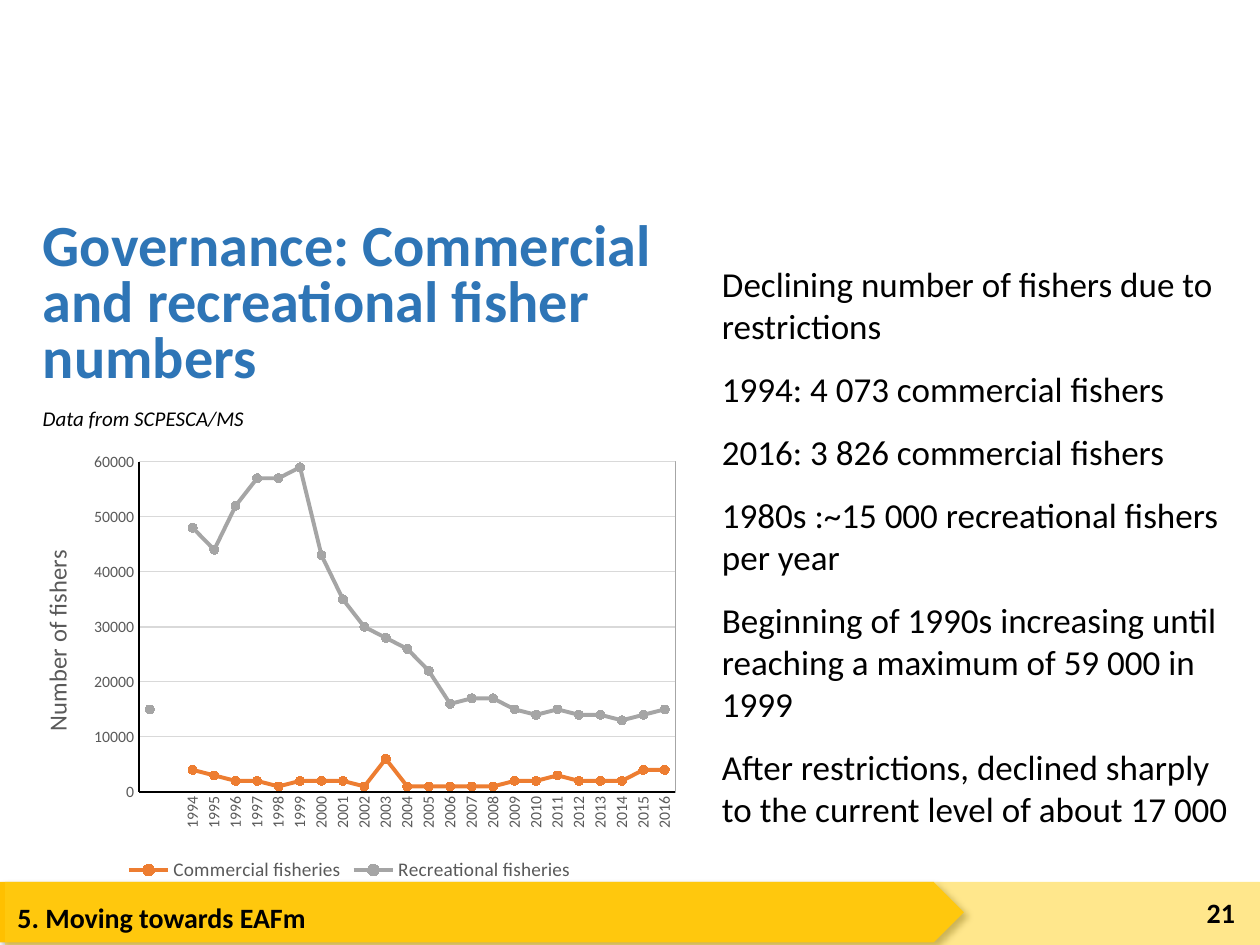
from dataclasses import dataclass
from typing import NamedTuple, Optional

from lxml import etree
from pptx import Presentation
from pptx import util as u
from pptx.chart.data import CategoryChartData
from pptx.dml.color import RGBColor
from pptx.enum import chart as ch, shapes, text
from pptx.oxml import parse_xml
from pptx.oxml.ns import nsdecls, qn

FONT = "Calibri"
BLACK, GREY = "000000", "595959"


class Share(NamedTuple):
    left: float
    top: float
    width: float
    height: float


@dataclass
class Style:
    size: float
    color: str = BLACK
    bold: bool = False
    italic: bool = False


@dataclass
class Label:
    words: str
    area: Share
    style: Style
    align: text.PP_ALIGN = text.PP_ALIGN.LEFT
    anchor: text.MSO_ANCHOR = text.MSO_ANCHOR.TOP
    wrap: bool = True


@dataclass
class Band:
    preset: shapes.MSO_SHAPE
    area: Share
    color: str
    alpha: Optional[int] = None
    shadow: bool = False


@dataclass
class Fishery:
    name: str
    color: str
    thousands: list


BANDS = [
    Band(shapes.MSO_SHAPE.PENTAGON, Share(0, 93.33, 76.5, 6.4), "FFC000", shadow=True),
    Band(shapes.MSO_SHAPE.RECTANGLE, Share(0.4, 93.33, 99.6, 6.67), "FFD01B", alpha=50),
]
LABELS = [
    Label("5. Moving towards EAFm", Share(0.4, 94.67, 73.5, 5.47), Style(16, bold=True)),
    Label("21", Share(91.7, 93.87, 7.3, 5.33), Style(16, bold=True),
          text.PP_ALIGN.RIGHT, text.MSO_ANCHOR.MIDDLE),
    Label("Data from SCPESCA/MS", Share(2.4, 42.27, 18.1, 4), Style(12, italic=True), wrap=False),
]
FINDINGS = [
    "Declining number of fishers due to restrictions",
    "1994: 4 073 commercial fishers",
    "2016: 3 826 commercial fishers",
    "1980s :~15 000 recreational fishers per year",
    "Beginning of 1990s increasing until reaching a maximum of 59 000 in 1999",
    "After restrictions, declined sharply to the current level of about 17 000",
]
YEARS = ["", ""] + [str(year) for year in range(1994, 2017)]
FISHERIES = [
    Fishery("Commercial fisheries", "ED7D31",
            [None, None, 4, 3, 2, 2, 1, 2, 2, 2, 1, 6, 1, 1, 1, 1, 1, 2, 2, 3, 2, 2, 2, 4, 4]),
    Fishery("Recreational fisheries", "A5A5A5",
            [15, None, 48, 44, 52, 57, 57, 59, 43, 35, 30, 28, 26, 22, 16, 17, 17, 15, 14, 15,
             14, 14, 13, 14, 15]),
]

deck = Presentation()
deck.slide_width, deck.slide_height = u.Inches(10), u.Inches(7.5)
slide = deck.slides.add_slide(deck.slide_layouts[1])


def rgb(color: str) -> RGBColor:
    return RGBColor.from_string(color)


def box(area: Share) -> tuple:
    across, down = deck.slide_width / 100, deck.slide_height / 100
    return (int(area.left * across), int(area.top * down),
            int(area.width * across), int(area.height * down))


def set_font(font, style: Style) -> None:
    font.name, font.size = FONT, u.Pt(style.size)
    font.bold, font.italic = style.bold, style.italic
    font.color.rgb = rgb(style.color)


def set_line(line, color: str, width: float) -> None:
    line.color.rgb, line.width = rgb(color), u.Pt(width)


def move(holder, area: Share):
    holder.left, holder.top, holder.width, holder.height = box(area)
    frame = holder.text_frame
    frame.auto_size = text.MSO_AUTO_SIZE.NONE
    frame.vertical_anchor = text.MSO_ANCHOR.TOP
    return frame


def draw_band(band: Band) -> None:
    strip = slide.shapes.add_shape(band.preset, *box(band.area))
    strip.shadow.inherit = False
    strip.fill.solid()
    strip.fill.fore_color.rgb = rgb(band.color)
    strip.line.fill.background()
    properties = strip.fill._xPr
    if band.alpha:
        tint = properties.find(qn("a:solidFill"))[0]
        etree.SubElement(tint, qn("a:alpha")).set("val", str(band.alpha * 1000))
    if band.shadow:
        properties.find(qn("a:effectLst")).append(parse_xml(
            f'<a:outerShdw {nsdecls("a")} blurRad="{u.Pt(4)}" dist="{u.Pt(3)}" dir="2700000">'
            f'<a:srgbClr val="{BLACK}"><a:alpha val="40000"/></a:srgbClr></a:outerShdw>'))


def write_label(label: Label) -> None:
    frame = slide.shapes.add_textbox(*box(label.area)).text_frame
    frame.word_wrap, frame.vertical_anchor = label.wrap, label.anchor
    line = frame.paragraphs[0]
    line.text, line.alignment = label.words, label.align
    set_font(line.font, label.style)


def write_title(words: str, area: Share) -> None:
    heading = move(slide.shapes.title, area).paragraphs[0]
    heading.text = words
    heading.alignment, heading.line_spacing = text.PP_ALIGN.LEFT, 0.8
    set_font(heading.font, Style(33.3, "2E75B6", bold=True))


def write_findings(findings: list, area: Share) -> None:
    frame = move(slide.placeholders[1], area)
    for number, finding in enumerate(findings):
        point = frame.add_paragraph() if number else frame.paragraphs[0]
        point.text = finding
        point.space_before, point.space_after = u.Pt(6 if number else 0), u.Pt(6)
        properties = point._p.get_or_add_pPr()
        properties.set("marL", "0")
        properties.set("indent", "0")
        etree.SubElement(properties, qn("a:buNone"))
        set_font(point.font, Style(20))


def draw_chart(area: Share) -> None:
    counts = CategoryChartData(number_format="General")
    counts.categories = YEARS
    for fishery in FISHERIES:
        counts.add_series(fishery.name, [n if n is None else n * 1000 for n in fishery.thousands])
    chart = slide.shapes.add_chart(ch.XL_CHART_TYPE.LINE_MARKERS, *box(area), counts).chart
    chart.has_title = False
    set_font(chart.font, Style(10))
    chart.has_legend = True
    chart.legend.position = ch.XL_LEGEND_POSITION.BOTTOM
    chart.legend.include_in_layout = False
    set_font(chart.legend.font, Style(11, GREY))

    years, fishers = chart.category_axis, chart.value_axis
    for axis in (years, fishers):
        axis.major_tick_mark = axis.minor_tick_mark = ch.XL_TICK_MARK.NONE
        set_font(axis.tick_labels.font, Style(9, GREY))
        set_line(axis.format.line, BLACK, 1.5)
    years._element.find(qn("c:txPr")).find(qn("a:bodyPr")).set("rot", "-5400000")
    fishers.minimum_scale, fishers.maximum_scale, fishers.major_unit = 0, 60000, 10000
    set_line(fishers.major_gridlines.format.line, "D9D9D9", 0.75)
    caption = fishers.axis_title.text_frame
    caption.text = "Number of fishers"
    caption._txBody.find(qn("a:bodyPr")).set("rot", "-5400000")
    set_font(caption.paragraphs[0].font, Style(14, GREY))

    for series, fishery in zip(chart.plots[0].series, FISHERIES):
        series.smooth = False
        set_line(series.format.line, fishery.color, 2.25)
        marker = series.marker
        marker.style, marker.size = ch.XL_MARKER_STYLE.CIRCLE, 5
        marker.format.fill.solid()
        marker.format.fill.fore_color.rgb = rgb(fishery.color)
        set_line(marker.format.line, fishery.color, 0.75)

    plot_area = chart._chartSpace.find(qn("c:chart")).find(qn("c:plotArea"))
    for layout in plot_area.findall(qn("c:layout")):
        plot_area.remove(layout)
    rules = [("layoutTarget", "inner"), ("xMode", "edge"), ("yMode", "edge"),
             ("x", 0.19), ("y", 0.06), ("w", 0.79), ("h", 0.73)]
    inner = "".join(f'<c:{tag} val="{value}"/>' for tag, value in rules)
    plot_area.insert(0, parse_xml(
        f'<c:layout {nsdecls("c")}><c:manualLayout>{inner}</c:manualLayout></c:layout>'))
    plot_area.append(parse_xml(
        f'<c:spPr {nsdecls("c", "a")}><a:noFill/><a:ln w="{u.Pt(0.5)}"><a:solidFill>'
        '<a:srgbClr val="A6A6A6"/></a:solidFill></a:ln></c:spPr>'))


for band in BANDS:
    draw_band(band)
write_findings(FINDINGS, Share(56.3, 27.07, 42.2, 61.87))
draw_chart(Share(0.8, 46, 53.9, 47.87))
for label in LABELS:
    write_label(label)
write_title("Governance: Commercial and recreational fisher numbers",
            Share(2.4, 22.8, 52.2, 20.8))
deck.save("out.pptx")
